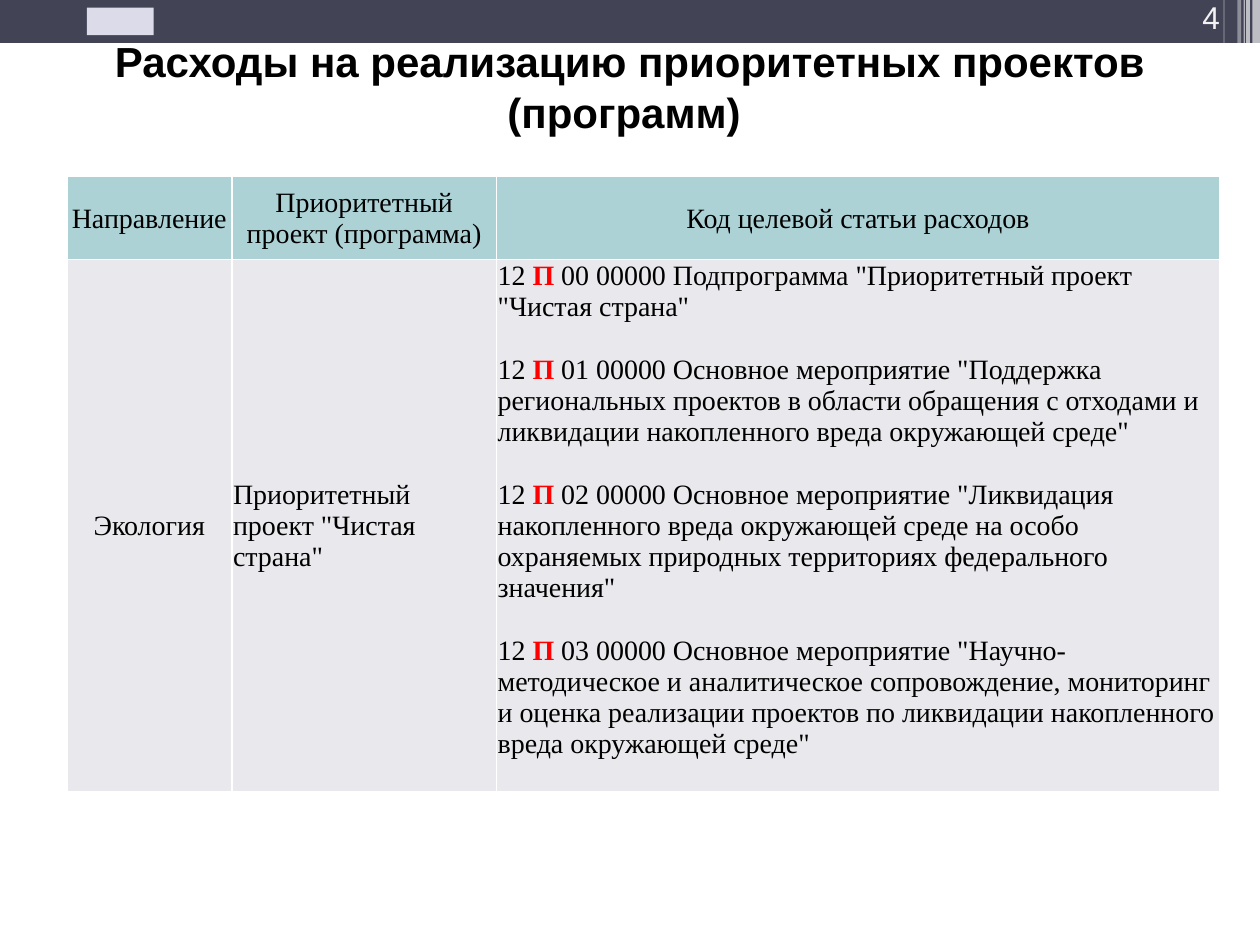
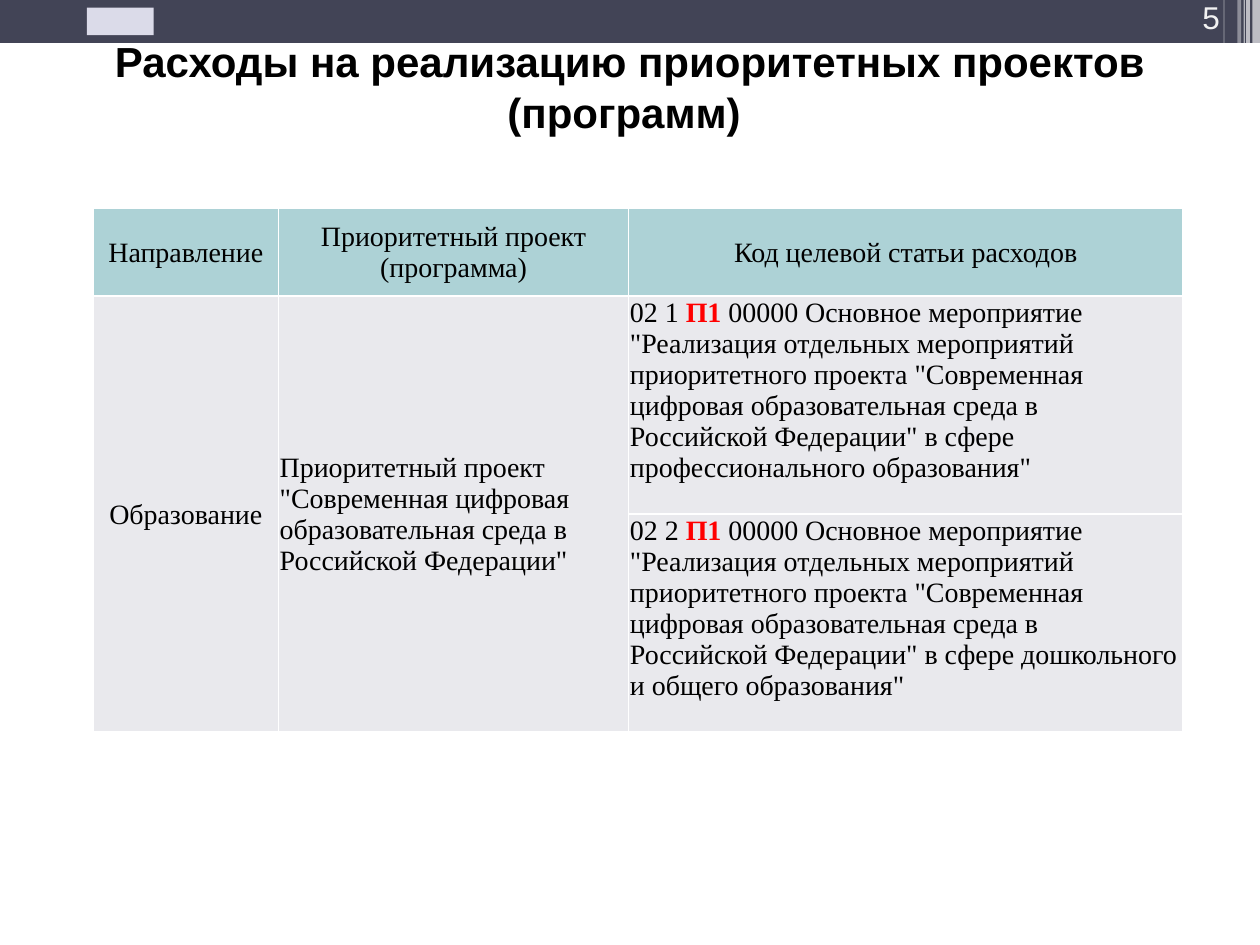
from dataclasses import dataclass

import lxml.etree
import pptx
import pptx.dml.color
import pptx.enum.shapes
import pptx.enum.text
import pptx.oxml.ns
import pptx.util

Inches = pptx.util.Inches
Align = pptx.enum.text.PP_ALIGN
Anchor = pptx.enum.text.MSO_ANCHOR
qn = pptx.oxml.ns.qn


@dataclass(frozen=True)
class Theme:
    band: str = "424456"
    emblem: str = "DBDBE9"
    white: str = "FFFFFF"
    ink: str = "000000"
    mark: str = "FF0000"
    number: str = "F2F2F2"
    header: str = "ADD2D6"
    body: str = "E9E9ED"
    title_font: str = "Arial"
    table_font: str = "Times New Roman"
    title_size: int = 24
    number_size: int = 18
    table_size: int = 16
    code_gap: int = 18


TITLE = "Расходы на реализацию приоритетных проектов (программ) "
HEADERS = ["Направление", "Приоритетный проект (программа)", "Код целевой статьи расходов"]
STRIPES = [
    (9.94, 0.06, 0.68, 65),
    (9.89, 0.03, 0.68, 65),
    (9.87, 0.01, 0.68, 60),
    (9.82, 0.03, 0.68, 40),
    (9.71, 0.01, 0.64, 30),
]
CLEAN_COUNTRY = [
    ("12 ", "П", ' 00 00000 Подпрограмма "Приоритетный проект "Чистая страна"'),
    ("12 ", "П", ' 01 00000 Основное мероприятие "Поддержка региональных проектов в области '
     'обращения с отходами и ликвидации накопленного вреда окружающей среде"'),
    ("12 ", "П", ' 02 00000 Основное мероприятие "Ликвидация накопленного вреда окружающей среде '
     'на особо охраняемых природных территориях федерального значения"'),
    ("12 ", "П", ' 03 00000 Основное мероприятие "Научно-методическое и аналитическое сопровождение, '
     'мониторинг и оценка реализации проектов по ликвидации накопленного вреда окружающей среде"'),
]
DIGITAL = (' 00000 Основное мероприятие "Реализация отдельных мероприятий приоритетного проекта '
           '"Современная цифровая образовательная среда в Российской Федерации" в сфере ')


class SlideWriter:
    """Draws the elements of the current slide in one style."""

    def __init__(self, deck, theme):
        self.deck = deck
        self.theme = theme
        self.page = None

    def start_page(self, number):
        self.page = self.deck.slides.add_slide(self.deck.slide_layouts[6])
        self.rectangle(0, 0, 10, 0.34, self.theme.band)
        for left, width, height, opacity in STRIPES:
            self.rectangle(left, 0, width, height, self.theme.white, opacity)
        self.rectangle(0.69, 0.06, 0.53, 0.22, self.theme.emblem)
        self.text(0.5, 0.41, 9, 0.55, TITLE, self.theme.title_size,
                  self.theme.ink, Align.CENTER, Anchor.MIDDLE, True)
        self.text(8.99, 0, 0.79, 0.33, str(number), self.theme.number_size,
                  self.theme.number, Align.RIGHT, Anchor.BOTTOM)

    def rectangle(self, left, top, width, height, color, opacity=100):
        shape = self.page.shapes.add_shape(
            pptx.enum.shapes.MSO_SHAPE.RECTANGLE,
            Inches(left), Inches(top), Inches(width), Inches(height))
        shape.shadow.inherit = False
        shape.line.fill.background()
        self.paint(shape.fill, color)
        if opacity < 100:
            tint = shape.fill._xPr.find(".//" + qn("a:srgbClr"))
            lxml.etree.SubElement(tint, qn("a:alpha"), val=str(opacity * 1000))

    def text(self, left, top, width, height, words, size, color, align, anchor, bold=False):
        box = self.page.shapes.add_textbox(
            Inches(left), Inches(top), Inches(width), Inches(height))
        frame = box.text_frame
        frame.word_wrap = True
        frame.vertical_anchor = anchor
        frame.text = words
        para = frame.paragraphs[0]
        para.alignment = align
        self.style(para.runs[0], self.theme.title_font, size, color, bold)

    def table(self, left, top, widths, heights):
        frame = self.page.shapes.add_table(
            len(heights), len(widths), Inches(left), Inches(top),
            Inches(sum(widths)), Inches(sum(heights)))
        table = frame.table
        table.first_row = table.horz_banding = False
        for column, width in zip(table.columns, widths):
            column.width = Inches(width)
        for row, height in zip(table.rows, heights):
            row.height = Inches(height)
        for cell in table.iter_cells():
            self.prepare(cell, self.theme.body)
        for cell, words in zip(table.rows[0].cells, HEADERS):
            self.paint(cell.fill, self.theme.header)
            self.label(cell, words, Align.CENTER)
        return table

    def prepare(self, cell, color):
        cell.margin_left = cell.margin_right = cell.margin_top = Inches(0.01)
        cell.margin_bottom = 0
        self.paint(cell.fill, color)
        properties = cell._tc.get_or_add_tcPr()
        for position, side in enumerate(("lnL", "lnR", "lnT", "lnB")):
            line = lxml.etree.Element(qn("a:" + side), w=str(pptx.util.Pt(1)))
            fill = lxml.etree.SubElement(line, qn("a:solidFill"))
            lxml.etree.SubElement(fill, qn("a:srgbClr"), val=self.theme.white)
            properties.insert(position, line)

    def label(self, cell, words, align=Align.LEFT):
        cell.vertical_anchor = Anchor.MIDDLE
        cell.text_frame.text = words
        para = cell.text_frame.paragraphs[0]
        para.alignment = align
        self.style(para.runs[0], self.theme.table_font, self.theme.table_size, self.theme.ink)

    def codes(self, cell, entries):
        cell.vertical_anchor = Anchor.TOP
        frame = cell.text_frame
        for index, entry in enumerate(entries):
            para = frame.add_paragraph() if index else frame.paragraphs[0]
            if index:
                para.space_before = pptx.util.Pt(self.theme.code_gap)
            for part, words in enumerate(entry):
                marked = part == 1
                span = para.add_run()
                span.text = words
                self.style(span, self.theme.table_font, self.theme.table_size,
                           self.theme.mark if marked else self.theme.ink, marked)

    def paint(self, fill, color):
        fill.solid()
        fill.fore_color.rgb = pptx.dml.color.RGBColor.from_string(color)

    def style(self, span, font, size, color, bold=False):
        span.font.name = font
        span.font.size = pptx.util.Pt(size)
        span.font.bold = bold
        span.font.color.rgb = pptx.dml.color.RGBColor.from_string(color)


def ecology_page(writer):
    writer.start_page(4)
    table = writer.table(0.53, 1.4, [1.31, 2.1, 5.74], [0.66, 4.2])
    writer.label(table.cell(1, 0), "Экология", Align.CENTER)
    writer.label(table.cell(1, 1), 'Приоритетный проект "Чистая страна"')
    writer.codes(table.cell(1, 2), CLEAN_COUNTRY)


def education_page(writer):
    writer.start_page(5)
    table = writer.table(0.74, 1.65, [1.47, 2.78, 4.4], [0.7, 1.73, 1.73])
    for column in range(2):
        table.cell(1, column).merge(table.cell(2, column))
    writer.label(table.cell(1, 0), "Образование", Align.CENTER)
    writer.label(table.cell(1, 1), 'Приоритетный проект "Современная цифровая '
                                   'образовательная среда в Российской Федерации"')
    spheres = ["профессионального образования", "дошкольного и общего образования"]
    for row, sphere in enumerate(spheres, 1):
        writer.codes(table.cell(row, 2), [(f"02 {row} ", "П1", f'{DIGITAL}{sphere}"')])


def main():
    deck = pptx.Presentation()
    deck.slide_width = Inches(10)
    deck.slide_height = Inches(7.5)
    writer = SlideWriter(deck, Theme())
    ecology_page(writer)
    education_page(writer)
    deck.save("out.pptx")


if __name__ == "__main__":
    main()
